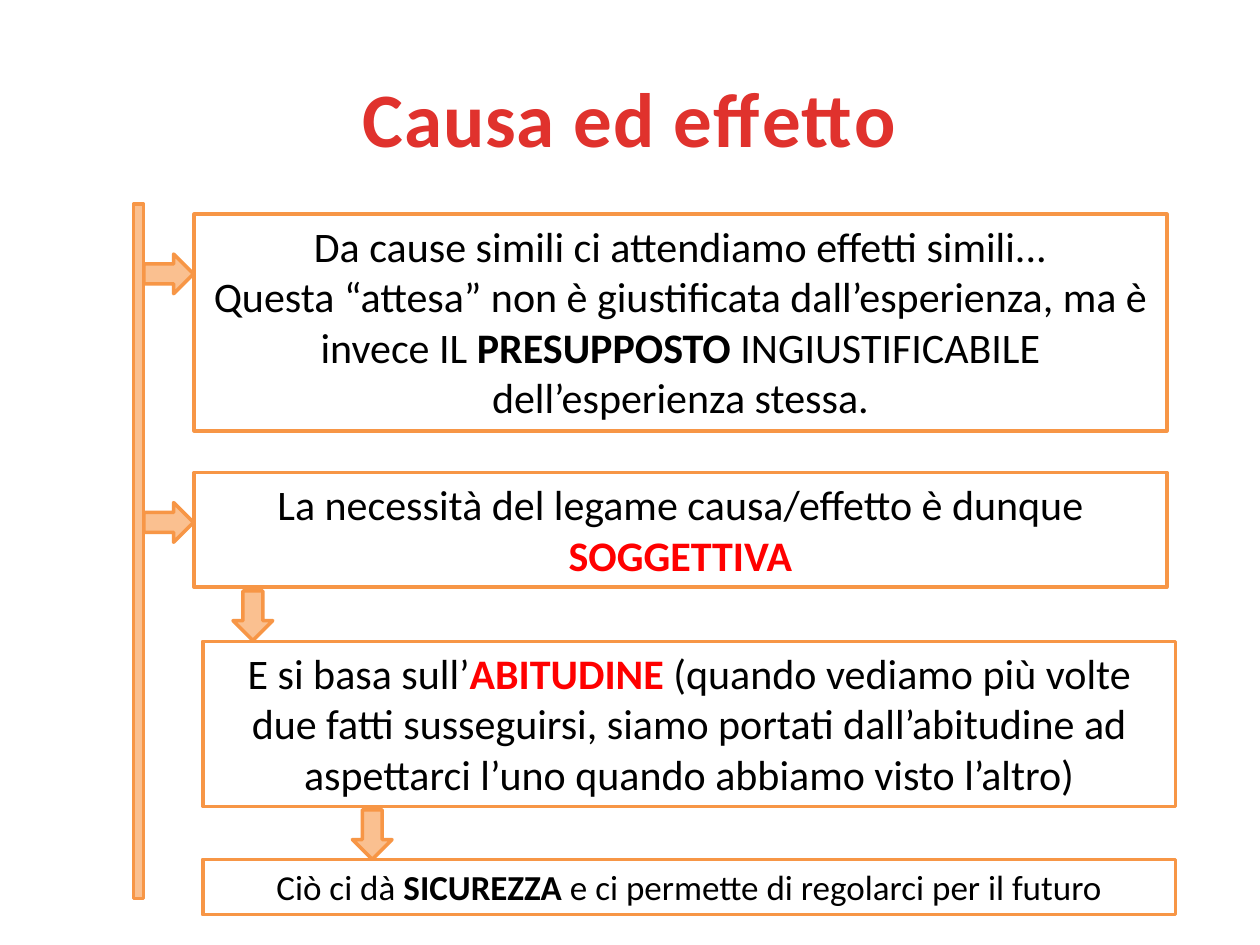
from pptx import Presentation
from pptx.dml.color import RGBColor
from pptx.enum.shapes import MSO_SHAPE
from pptx.enum.text import MSO_ANCHOR, MSO_AUTO_SIZE, PP_ALIGN
from pptx.util import Pt

COLORS = {"title": "E0322D", "text": "000000", "key": "FF0000",
          "bar": "FAC090", "border": "F79646", "box": "FFFFFF"}
FONT = "Calibri"
TITLE = "Causa ed effetto"

# Each box: left, top, height, text size, paragraphs of (text, bold, colour) runs
BOX_WIDTH = 555.84
BOXES = [
    (110.88, 122.4, 123.84, 24, [
        [("Da cause simili ci attendiamo effetti simili...", False, "text")],
        [("Questa “attesa” non è giustificata dall’esperienza, ma è invece IL ", False, "text"),
         ("PRESUPPOSTO", True, "text"),
         (" INGIUSTIFICABILE dell’esperienza stessa.", False, "text")]]),
    (110.88, 270, 65.52, 24, [
        [("La necessità del legame causa/effetto è dunque ", False, "text"),
         ("SOGGETTIVA", True, "key")]]),
    (115.92, 366.48, 94.32, 24, [
        [("E si basa sull’", False, "text"),
         ("ABITUDINE", True, "key"),
         (" (quando vediamo più volte due fatti susseguirsi, siamo portati "
          "dall’abitudine ad aspettarci l’uno quando abbiamo visto l’altro)", False, "text")]]),
    (115.92, 491.04, 31.68, 20, [
        [("Ciò ci dà ", False, "text"),
         ("SICUREZZA", True, "text"),
         (" e ci permette di regolarci per il futuro", False, "text")]]),
]

BAR = (76.32, 116.64, 5.76, 396.72)
ARROW_SIZE = (28.35, 22.68)
# Each arrow: left, top, rotation
ARROWS = [(82.2, 145.2, 0), (82.2, 287.2, 0), (130.3, 340.5, 90), (198.5, 465.6, 90)]


def color(name):
    return RGBColor.from_string(COLORS[name])


def add_block(slide, preset, bounds, fill):
    block = slide.shapes.add_shape(preset, *map(Pt, bounds))
    block.shadow.inherit = False
    block.fill.solid()
    block.fill.fore_color.rgb = color(fill)
    block.line.color.rgb = color("border")
    block.line.width = Pt(2)
    return block


def add_run(paragraph, text, size, bold, color_name):
    run = paragraph.add_run()
    run.text = text
    run.font.name = FONT
    run.font.size = Pt(size)
    run.font.bold = bold
    run.font.color.rgb = color(color_name)
    return run


def add_box(slide, left, top, height, size, paragraphs):
    box = add_block(slide, MSO_SHAPE.RECTANGLE, (left, top, BOX_WIDTH, height), "box")
    frame = box.text_frame
    frame.word_wrap = True
    frame.auto_size = MSO_AUTO_SIZE.SHAPE_TO_FIT_TEXT
    frame.vertical_anchor = MSO_ANCHOR.TOP
    for index, runs in enumerate(paragraphs):
        paragraph = frame.add_paragraph() if index else frame.paragraphs[0]
        paragraph.alignment = PP_ALIGN.CENTER
        for text, bold, color_name in runs:
            add_run(paragraph, text, size, bold, color_name)


def add_title(slide):
    title = slide.shapes.title
    title.left, title.top, title.width, title.height = map(Pt, (36, 21.6, 648, 90))
    title.text_frame.vertical_anchor = MSO_ANCHOR.MIDDLE
    paragraph = title.text_frame.paragraphs[0]
    paragraph.alignment = PP_ALIGN.CENTER
    run = add_run(paragraph, TITLE, 44, True, "title")
    run.font._element.set("spc", "50")


def main():
    presentation = Presentation()
    presentation.slide_width, presentation.slide_height = Pt(720), Pt(540)
    slide = presentation.slides.add_slide(presentation.slide_layouts[5])
    add_title(slide)
    add_block(slide, MSO_SHAPE.RECTANGLE, BAR, "bar")
    for (left, top, rotation), box in zip(ARROWS, BOXES):
        arrow = add_block(slide, MSO_SHAPE.RIGHT_ARROW, (left, top, *ARROW_SIZE), "bar")
        arrow.rotation = rotation
        add_box(slide, *box)
    presentation.save("out.pptx")


if __name__ == "__main__":
    main()
